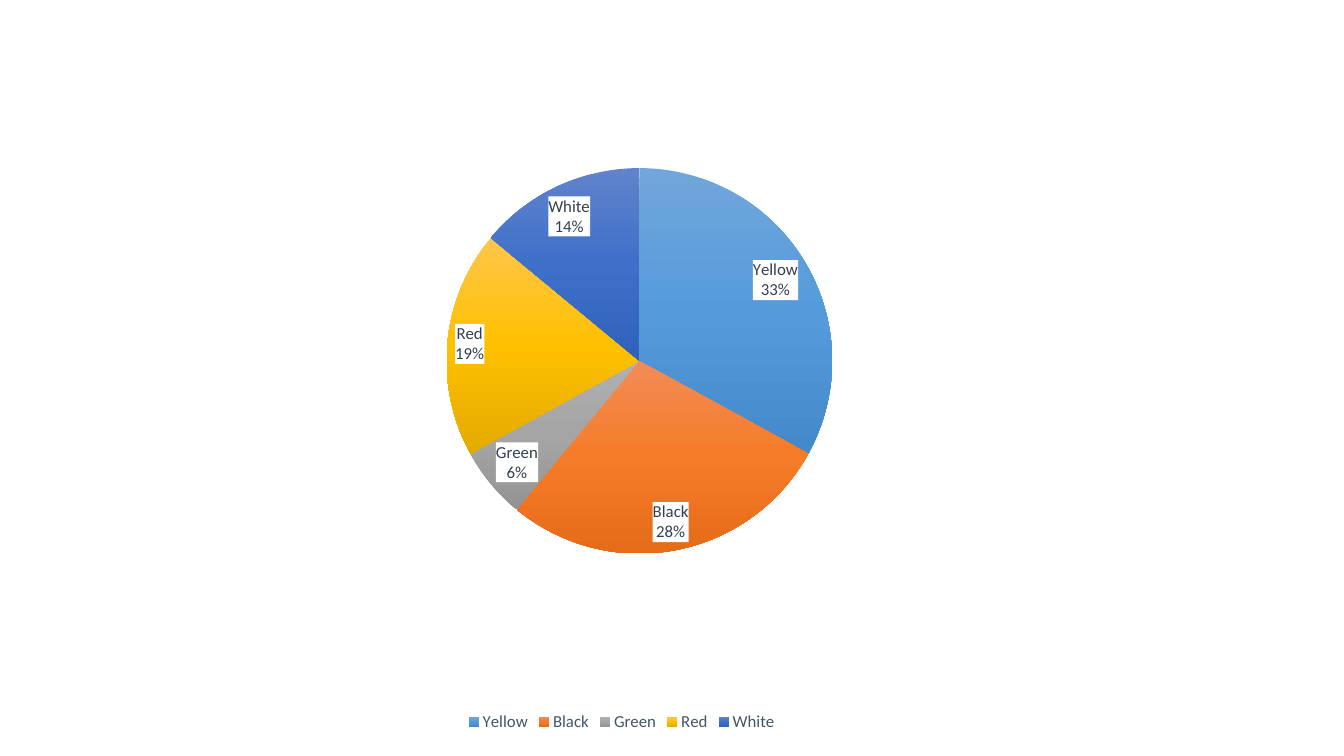
from copy import deepcopy
from pptx import Presentation
from pptx.chart.data import CategoryChartData as Data
from pptx.dml.color import RGBColor as RGB
from pptx.enum.chart import XL_CHART_TYPE as Kind
from pptx.enum.chart import XL_LABEL_POSITION as Spot
from pptx.enum.chart import XL_LEGEND_POSITION as Side
from pptx.oxml import parse_xml
from pptx.oxml.ns import nsdecls
from pptx.util import Inches, Pt

# Name, value, gradient from top to bottom
SLICES = [
    ("Yellow", 33, ("71A6DB", "559BDB", "448ACA")),
    ("Black", 28, ("F18C57", "F67B28", "E56C19")),
    ("Green", 6, ("AFAFAF", "A5A5A5", "939393")),
    ("Red", 19, ("FFC64B", "FFC000", "E3AB00")),
    ("White", 14, ("6183CB", "3E70CA", "3062BB")),
]
FRAME = {"x": 0.333, "y": 0.221, "w": 0.368, "h": 0.529}


def color(text):
    return RGB.from_string(text)


def apply(target, values):
    for name, value in values.items():
        setattr(target, name, value)


class Deck:
    face = "Calibri"

    def __init__(self):
        self.deck = Presentation()
        apply(self.deck, {"slide_width": Inches(13.33), "slide_height": Inches(7.5)})
        self.slide = self.deck.slides.add_slide(self.deck.slide_layouts[6])

    def font(self, font, size, tone):
        apply(font, {"name": self.face, "size": Pt(size)})
        font.color.rgb = color(tone)

    def pie(self, box, slices):
        data = Data()
        data.categories = [name for name, _, _ in slices]
        data.add_series("Series 1", [value for _, value, _ in slices])
        spot = [Inches(side) for side in box]
        chart = self.slide.shapes.add_chart(Kind.PIE, *spot, data).chart
        chart.has_title = False
        self.font(chart.font, 10, "000000")
        chart.plots[0].vary_by_categories = True
        series = chart.plots[0].series[0]
        for index, (_, _, tones) in enumerate(slices):
            self.shade(series, index, tones)
        return chart

    def shade(self, series, index, tones):
        form = series.points[index].format
        form.line.fill.background()
        form.fill.gradient()
        form.fill.gradient_angle = 270
        # A third stop in the middle
        stops = series._element.xpath(".//a:gsLst")[-1]
        stops.insert(1, deepcopy(stops[0]))
        for step, (stop, tone) in enumerate(zip(form.fill.gradient_stops, tones)):
            stop.color.rgb = color(tone)
            stop.position = step / 2

    def place(self, chart, frame):
        area = chart._chartSpace.xpath(".//c:plotArea")[0]
        for old in area.xpath("./c:layout"):
            area.remove(old)
        modes = "".join(f'<c:{key}Mode val="edge"/>' for key in "xy")
        sizes = "".join(f'<c:{key} val="{value}"/>' for key, value in frame.items())
        area.insert(0, parse_xml(
            f'<c:layout {nsdecls("c")}><c:manualLayout><c:layoutTarget val="inner"/>'
            f"{modes}{sizes}</c:manualLayout></c:layout>"))

    def label(self, chart, tone, back):
        labels = chart.plots[0].series[0].data_labels
        apply(labels, {
            "show_percentage": True, "show_category_name": True,
            "show_value": False, "show_legend_key": False,
            "number_format": "0%", "number_format_is_linked": False,
            "position": Spot.BEST_FIT,
        })
        self.font(labels.font, 12, tone)
        # White box behind each label, name above percent
        node = labels._element
        node.xpath("./c:txPr")[0].addprevious(parse_xml(
            f'<c:spPr {nsdecls("c", "a")}><a:solidFill><a:srgbClr val="{back}"/>'
            "</a:solidFill><a:ln><a:noFill/></a:ln></c:spPr>"))
        last = node.xpath("./c:showBubbleSize | ./c:showPercent")[-1]
        last.addnext(parse_xml(f'<c:separator {nsdecls("c")}>\n</c:separator>'))

    def legend(self, chart, tone):
        chart.has_legend = True
        apply(chart.legend, {"position": Side.BOTTOM, "include_in_layout": False})
        self.font(chart.legend.font, 12, tone)


def main():
    deck = Deck()
    chart = deck.pie((0.97, 0.07, 10.39, 7.23), SLICES)
    deck.place(chart, FRAME)
    deck.label(chart, "333F50", "FFFFFF")
    deck.legend(chart, "44546A")
    deck.deck.save("out.pptx")


if __name__ == "__main__":
    main()
